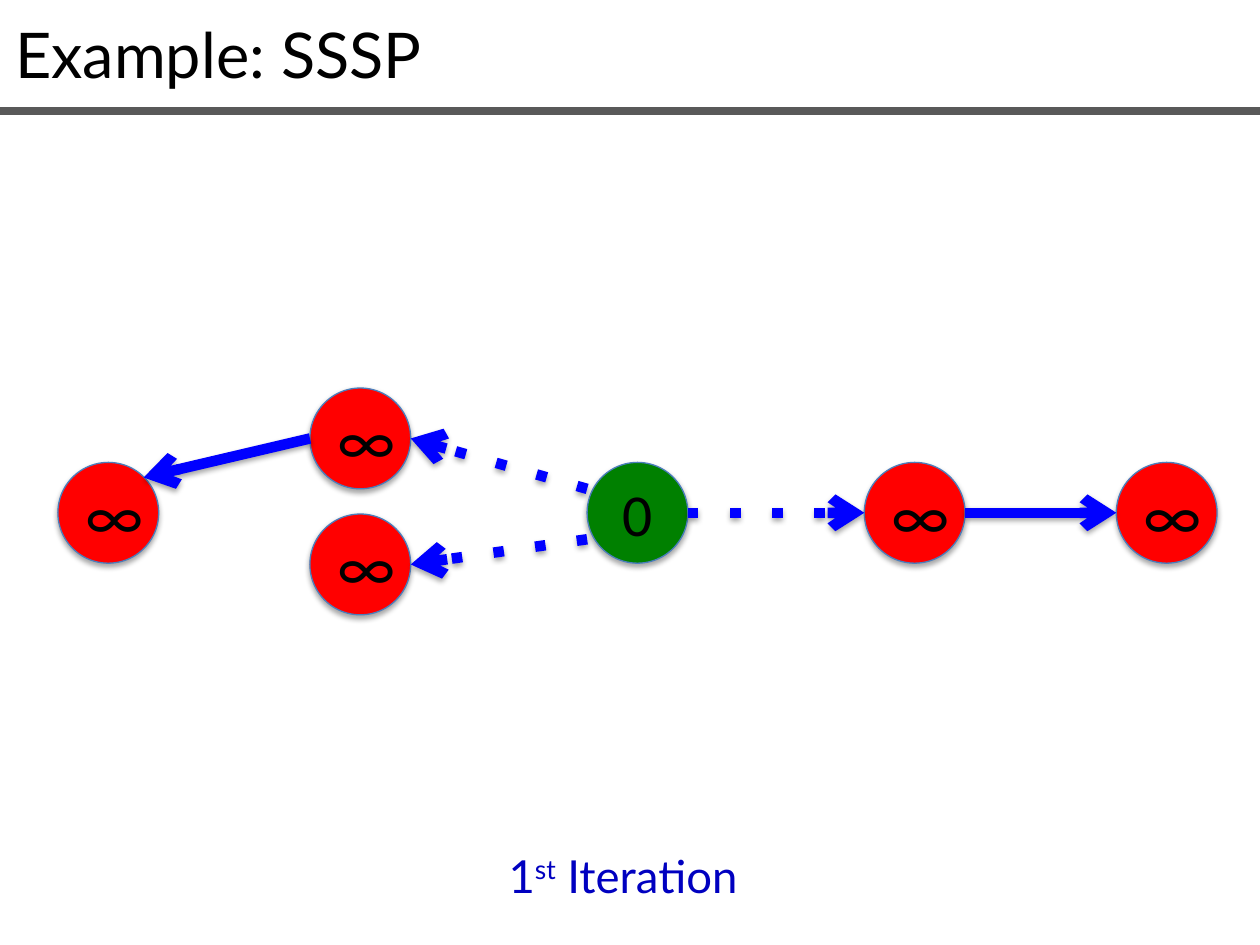
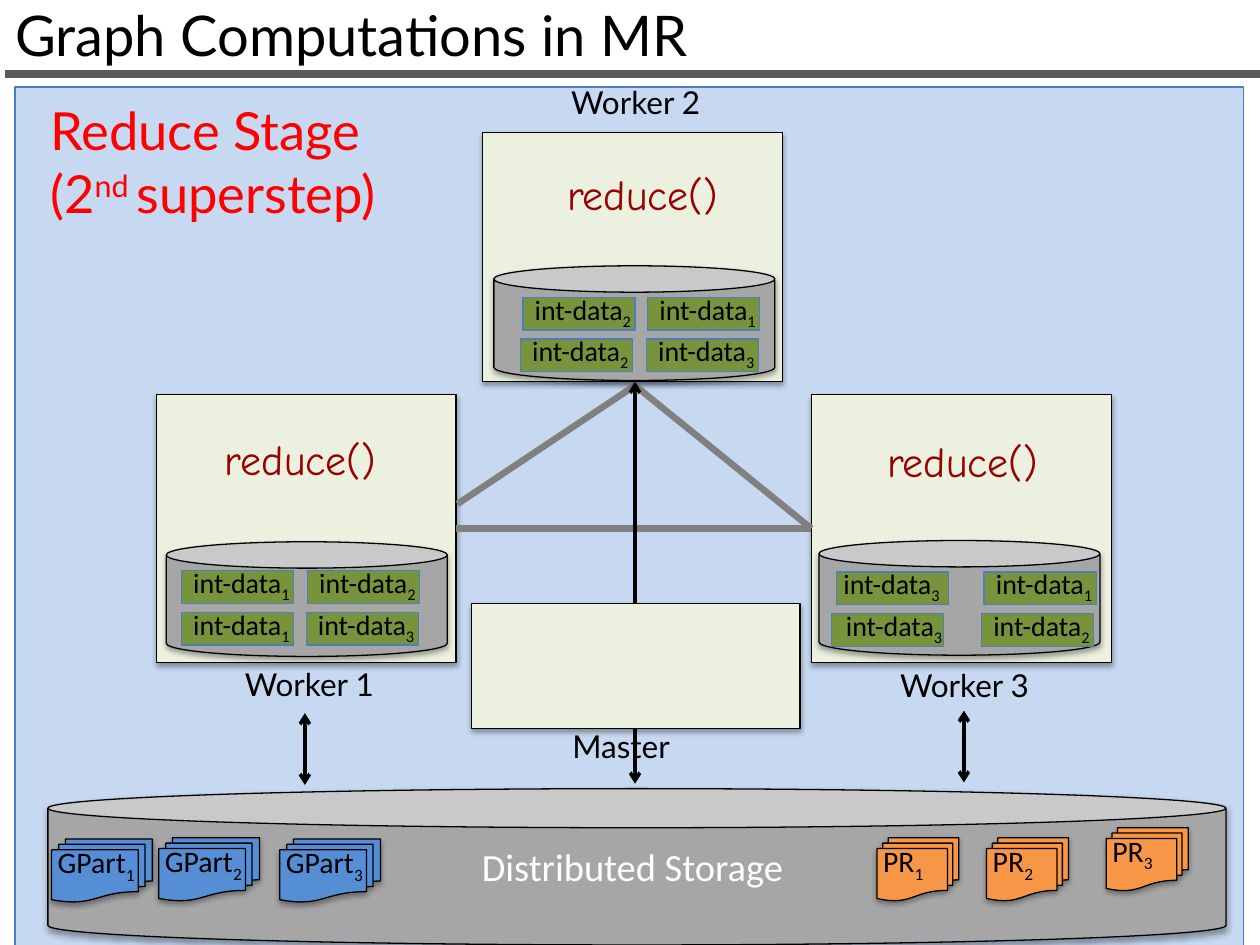
from dataclasses import dataclass
from typing import Any, NamedTuple

import lxml.etree as etree
import pptx
import pptx.dml.color
import pptx.enum.shapes
import pptx.enum.text
import pptx.oxml.ns
import pptx.util

Inches = pptx.util.Inches
Pt = pptx.util.Pt
SHAPE = pptx.enum.shapes.MSO_SHAPE
ALIGN = pptx.enum.text.PP_ALIGN
ANCHOR = pptx.enum.text.MSO_ANCHOR
FIT = pptx.enum.text.MSO_AUTO_SIZE
qn = pptx.oxml.ns.qn


# Theme: colours, fonts and type styles
class Style(NamedTuple):
    size: float
    font: str
    color: str = "000000"
    align: Any = ALIGN.CENTER


@dataclass(frozen=True)
class Theme:
    black: str = "000000"
    outline: str = "4B7EBC"
    rule: str = "595959"
    source: str = "008000"
    inactive: str = "FF0000"
    edge: str = "0000FF"
    panel: str = "C6D9F1"
    box: str = "EBF1DE"
    disk: str = "A6A6A6"
    data: str = "77933C"
    link: str = "808080"
    graph: str = "558ED5"
    rank: str = "F79646"
    distance: Style = Style(34, "Calibri")
    infinity: Style = Style(39, "Calibri")
    iteration: Style = Style(26, "Lato", "0000C0")
    machine: Style = Style(18, "Lato")
    call: Style = Style(24, "Comic Neue", "990000")
    storage: Style = Style(22, "Calibri", "FFFFFF")
    chip: Style = Style(16, "Calibri")
    document: Style = Style(17, "Calibri", align=ALIGN.LEFT)
    stage: Style = Style(30, "Lato", "FF0000", ALIGN.LEFT)


T = Theme()


# Records for the repeated elements
class Box(NamedTuple):
    x: float
    y: float
    w: float
    h: float

    def emu(self) -> list:
        return [Inches(v) for v in self]


class Run(NamedTuple):
    text: str
    base: int = 0


class Vertex(NamedTuple):
    x: float
    y: float
    text: str = "∞"
    fill: str = T.inactive
    style: Style = T.infinity


class Edge(NamedTuple):
    start: tuple
    end: tuple
    dash: str = ""


class Chip(NamedTuple):
    x: float
    y: float
    number: str
    label_dx: float = -0.02


@dataclass(frozen=True)
class Worker:
    name: str
    box: Box
    name_box: Box
    call_box: Box
    disk: Box
    chips: list


class Document(NamedTuple):
    name: str
    number: str
    x: float
    y: float
    w: float
    fill: str


# Helpers
def rgb(color: str):
    return pptx.dml.color.RGBColor.from_string(color)


def put(target, values: dict) -> None:
    for name, value in values.items():
        setattr(target, name, value)


def set_effects(sp, shadow: bool) -> None:
    effects = etree.SubElement(sp._element.spPr, qn("a:effectLst"))
    if shadow:
        outer = etree.SubElement(effects, qn("a:outerShdw"), blurRad="40000",
                                 dist="23000", dir="5400000", rotWithShape="0")
        color = etree.SubElement(outer, qn("a:srgbClr"), val=T.black)
        etree.SubElement(color, qn("a:alpha"), val="35000")


def write(tf, lines: list, style: Style, **frame) -> None:
    put(tf, {"word_wrap": True, **frame})
    for i, runs in enumerate(lines):
        p = tf.add_paragraph() if i else tf.paragraphs[0]
        p.alignment = style.align
        for run in runs:
            r = p.add_run()
            r.text = run.text
            put(r.font, {"size": Pt(style.size), "name": style.font})
            r.font.color.rgb = rgb(style.color)
            if run.base:
                r._r.get_or_add_rPr().set("baseline", str(run.base * 1000))


def add_text(slide, box: Box, lines: list, style: Style, wrap: bool = True):
    sp = slide.shapes.add_textbox(*box.emu())
    write(sp.text_frame, lines, style, word_wrap=wrap,
          auto_size=FIT.SHAPE_TO_FIT_TEXT)
    return sp


def add_shape(slide, kind, box: Box, fill: str, line: str = T.black,
              shadow: bool = True):
    sp = slide.shapes.add_shape(kind, *box.emu())
    sp.fill.solid()
    sp.fill.fore_color.rgb = rgb(fill)
    sp.line.color.rgb = rgb(line)
    sp.line.width = Pt(0.75)
    set_effects(sp, shadow)
    return sp


def add_line(slide, start: tuple, end: tuple, color: str, width: float,
             dash: str = "", arrows: tuple = (), shadow: bool = False):
    sp = slide.shapes.add_connector(pptx.enum.shapes.MSO_CONNECTOR.STRAIGHT,
                                    *[Inches(v) for v in (*start, *end)])
    sp.line.color.rgb = rgb(color)
    sp.line.width = Pt(width)
    ln = sp.line._get_or_add_ln()
    if dash:
        etree.SubElement(ln, qn("a:prstDash"), val=dash)
    for arrow in arrows:
        etree.SubElement(ln, qn(f"a:{arrow}"), type="arrow")
    set_effects(sp, shadow)
    return sp


def add_slide(prs, title: str, size: int, box: Box, rule_x: float, rule_y: float):
    slide = prs.slides.add_slide(prs.slide_layouts[5])
    sp = slide.shapes.title
    put(sp, dict(zip(("left", "top", "width", "height"), box.emu())))
    write(sp.text_frame, [[Run(title)]], Style(size, "Lato", align=ALIGN.LEFT),
          vertical_anchor=ANCHOR.TOP, auto_size=FIT.NONE)
    add_line(slide, (rule_x, rule_y), (rule_x + 10, rule_y), T.rule, 4.5)
    return slide


# Slide 1: shortest paths
VERTICES = [
    Vertex(4.66, 3.67, "0", T.source, T.distance),
    Vertex(2.46, 3.08),
    Vertex(0.46, 3.67),
    Vertex(6.86, 3.67),
    Vertex(8.86, 3.67),
    Vertex(2.46, 4.08),
]
EDGES = [
    Edge((4.66, 4.28), (3.26, 4.48), "dot"),
    Edge((4.66, 3.88), (3.26, 3.48), "dot"),
    Edge((5.46, 4.07), (6.86, 4.07), "dot"),
    Edge((7.66, 4.07), (8.86, 4.07)),
    Edge((2.46, 3.48), (1.14, 3.79)),
]


def build_sssp(prs) -> None:
    slide = add_slide(prs, "Example: SSSP", 36, Box(0.02, 0.07, 9.44, 0.71), 0, 0.88)
    for v in VERTICES:
        sp = add_shape(slide, SHAPE.OVAL, Box(v.x, v.y, 0.8, 0.8), v.fill, T.outline)
        write(sp.text_frame, [[Run(v.text)]], v.style, vertical_anchor=ANCHOR.MIDDLE)
    for e in EDGES:
        add_line(slide, e.start, e.end, T.edge, 6, e.dash, ("tailEnd",), shadow=True)
    add_text(slide, Box(1.54, 6.68, 6.81, 0.54),
             [[Run("1"), Run("st", 30), Run(" Iteration")]], T.iteration)


# Slide 2: reduce stage
WORKERS = [
    Worker("Worker 1", Box(1.24, 3.13, 2.38, 2.13), Box(1.34, 5.23, 2.23, 0.4),
           Box(1.6, 3.39, 1.57, 0.5), Box(1.32, 4.3, 2.23, 0.91),
           [Chip(1.44, 4.53, "1"), Chip(1.44, 4.86, "1"),
            Chip(2.44, 4.53, "2"), Chip(2.43, 4.86, "3")]),
    Worker("Worker 2", Box(3.83, 1.05, 2.38, 1.98), Box(4.1, 0.61, 1.89, 0.4),
           Box(4.3, 1.29, 1.6, 0.5), Box(3.92, 2.11, 2.23, 0.91),
           [Chip(4.15, 2.36, "2"), Chip(4.13, 2.69, "2"),
            Chip(5.14, 2.36, "1"), Chip(5.13, 2.69, "3")]),
    Worker("Worker 3", Box(6.44, 3.13, 2.38, 2.13), Box(6.79, 5.24, 1.73, 0.4),
           Box(6.76, 3.41, 1.76, 0.5), Box(6.5, 4.29, 2.23, 0.91),
           [Chip(6.64, 4.54, "3", -0.06), Chip(6.6, 4.87, "3", 0),
            Chip(7.81, 4.54, "1"), Chip(7.79, 4.87, "2")]),
]
DOCUMENTS = [
    Document("GPart", "1", 0.41, 6.66, 0.8, T.graph),
    Document("GPart", "2", 1.26, 6.65, 0.8, T.graph),
    Document("GPart", "3", 2.22, 6.66, 0.8, T.graph),
    Document("PR", "1", 6.96, 6.65, 0.65, T.rank),
    Document("PR", "2", 7.83, 6.65, 0.65, T.rank),
    Document("PR", "3", 8.78, 6.57, 0.65, T.rank),
]
STORAGE_ARROWS = [(2.42, 5.66, 6.23), (7.65, 5.64, 6.21), (5.04, 3.03, 6.22)]
HUB = (5.04, 3.06)


def add_worker_data(slide, worker: Worker) -> None:
    disk = add_shape(slide, SHAPE.CAN, worker.disk, T.disk)
    disk.adjustments[0] = 0.23
    for c in worker.chips:
        add_shape(slide, SHAPE.RECTANGLE, Box(c.x, c.y, 0.89, 0.26), T.data,
                  T.outline, shadow=False)
        add_text(slide, Box(c.x + c.label_dx, c.y - 0.09, 0.99, 0.37),
                 [[Run("int-data"), Run(c.number, -25)]], T.chip, wrap=False)
    add_text(slide, worker.call_box, [[Run("reduce()")]], T.call)


def add_document(slide, d: Document) -> None:
    add_shape(slide, SHAPE.FLOWCHART_MULTIDOCUMENT, Box(d.x, d.y, d.w, 0.5), d.fill)
    add_text(slide, Box(d.x - 0.05, d.y - 0.01, d.w + 0.1, 0.39),
             [[Run(d.name), Run(d.number, -25)]], T.document)


def build_reduce(prs) -> None:
    slide = add_slide(prs, "Graph Computations in MR", 32,
                      Box(0.02, -0.05, 10.05, 0.66), 0.04, 0.59)
    add_shape(slide, SHAPE.RECTANGLE, Box(0.12, 0.69, 9.75, 6.85), T.panel,
              T.outline, shadow=False)
    add_shape(slide, SHAPE.CAN, Box(0.38, 6.26, 9.35, 1.24), T.disk)

    # Worker boxes and the network between them
    boxes = []
    for worker in WORKERS:
        add_text(slide, worker.name_box, [[Run(worker.name)]], T.machine)
        boxes.append(add_shape(slide, SHAPE.RECTANGLE, worker.box, T.box))
    left, right = boxes[0], boxes[2]
    add_line(slide, (6.44, 4.2), HUB, T.link, 3.75).begin_connect(right, 1)
    add_line(slide, HUB, (3.63, 4), T.link, 3.75)
    base = add_line(slide, (6.44, 4.2), (3.62, 4.2), T.link, 3.75)
    base.begin_connect(right, 1)
    base.end_connect(left, 3)
    for x, top, bottom in STORAGE_ARROWS:
        add_line(slide, (x, top), (x, bottom), T.black, 2,
                 arrows=("headEnd", "tailEnd"))

    # Storage contents, worker data and master
    add_text(slide, Box(2.94, 6.64, 4.16, 0.47), [[Run("Distributed Storage")]], T.storage)
    for worker in WORKERS:
        add_worker_data(slide, worker)
    for document in DOCUMENTS:
        add_document(slide, document)
    add_text(slide, Box(0.3, 0.73, 3.18, 1.11),
             [[Run("Reduce Stage")], [Run("(2"), Run("nd ", 30), Run("superstep)")]],
             T.stage)
    add_text(slide, Box(4.05, 5.72, 1.76, 0.4), [[Run("Master")]], T.machine)
    add_shape(slide, SHAPE.RECTANGLE, Box(3.74, 4.79, 2.61, 0.99), T.box)


def main() -> None:
    prs = pptx.Presentation()
    put(prs, {"slide_width": Inches(10), "slide_height": Inches(7.5)})
    build_sssp(prs)
    build_reduce(prs)
    prs.save("out.pptx")


if __name__ == "__main__":
    main()
